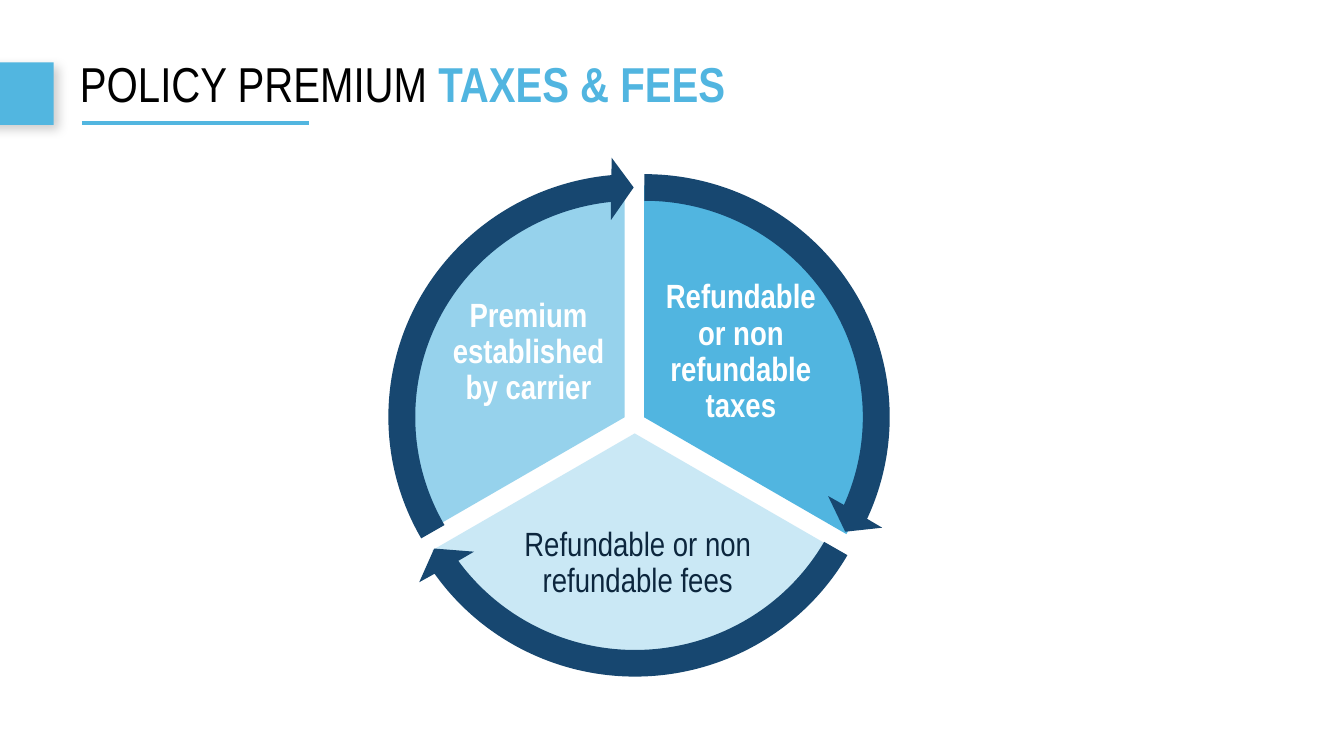
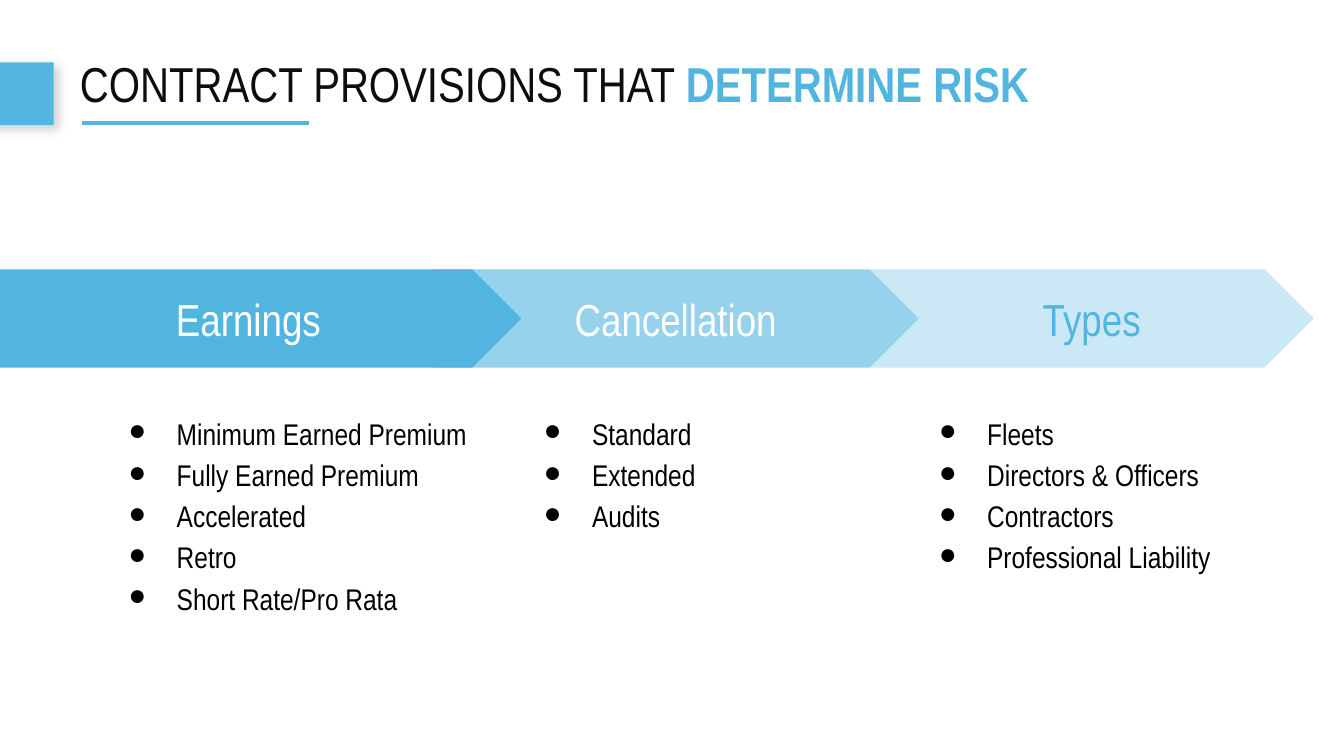
import math

from lxml import etree
from pptx import Presentation
from pptx import util as u
from pptx.dml.color import RGBColor
from pptx.enum import shapes, text
from pptx.oxml import ns

PX = 9144  # 100 px to the inch
FONT = "Arial Narrow"
SKY = RGBColor(0x51, 0xB5, 0xE0)
BAND = RGBColor(0x52, 0xB6, 0xE0)
NAVY = RGBColor(0x17, 0x47, 0x70)
INK = RGBColor(0x0C, 0x26, 0x3D)
BLACK = RGBColor(0, 0, 0)
SOFT_BLACK = RGBColor(0x0D, 0x0D, 0x0D)
WHITE = RGBColor(0xFF, 0xFF, 0xFF)


def px(*lengths):
    return [u.Emu(round(length * PX)) for length in lengths]


def child(parent, tag, **attributes):
    return etree.SubElement(parent, ns.qn(tag), attributes)


def paint(shape, color, opacity=100):
    shape.shadow.inherit = False
    shape.line.fill.background()
    shape.fill.solid()
    shape.fill.fore_color.rgb = color
    if opacity < 100:
        color_node = shape.fill._xPr.find(ns.qn("a:solidFill"))[0]
        child(color_node, "a:alpha", val=str(opacity * 1000))


def preset(slide, kind, box, color, opacity=100):
    shape = slide.shapes.add_shape(kind, *px(*box))
    paint(shape, color, opacity)
    return shape


def set_frame(shape, inset, anchor=text.MSO_ANCHOR.MIDDLE):
    frame = shape.text_frame
    frame.word_wrap = True
    frame.vertical_anchor = anchor
    frame.margin_left, frame.margin_top, frame.margin_right, frame.margin_bottom = px(*[inset] * 4)
    return frame


def add_run(paragraph, words, size, color, bold=False):
    run = paragraph.add_run()
    run.text = words
    run.font.name = FONT
    run.font.size = u.Pt(size)
    run.font.bold = bold
    run.font.color.rgb = color


def heading(slide, plain, strong, plain_color):
    # Underline
    rule = slide.shapes.add_connector(shapes.MSO_CONNECTOR.STRAIGHT, *px(122, 183, 460, 183))
    rule.line.color.rgb = BAND
    rule.line.width = u.Pt(5)
    child(rule._element.spPr, "a:effectLst")

    # Side tab with a soft shadow
    tab = preset(slide, shapes.MSO_SHAPE.RECTANGLE, (-51, 93, 131, 93), BAND)
    effects = tab._element.spPr.find(ns.qn("a:effectLst"))
    shadow = child(effects, "a:outerShdw", blurRad=str(u.Pt(12)), dist=str(u.Pt(7)),
                   dir=str(45 * 60000), algn="tl", rotWithShape="0")
    shade = child(shadow, "a:srgbClr", val="000000")
    child(shade, "a:alpha", val="20000")

    # Two-tone title
    title = set_frame(slide.shapes.add_textbox(*px(119, 59, 1780, 141)), 0).paragraphs[0]
    title.line_spacing = 0.9
    add_run(title, plain, 52.5, plain_color)
    add_run(title, strong, 52.5, SKY, bold=True)


def sector(group, box, start, opacity, label, label_box, color, bold):
    pie = preset(group, shapes.MSO_SHAPE.PIE, box, SKY, opacity)
    for index, angle in enumerate((start, (start + 120) % 360)):
        pie.adjustments[index] = angle * 0.6  # 60000ths of a degree over 100000
    caption = set_frame(group.shapes.add_textbox(*px(*label_box)), 3).paragraphs[0]
    caption.alignment = text.PP_ALIGN.CENTER
    caption.line_spacing = 0.9
    add_run(caption, label, 36, color, bold)


def arc_arrow(group, box, start):
    left, top, width, height = box

    def polar(radius, angle, pull=0):
        """Point at an angle, moved along the tangent by pull times the radius."""
        turn = math.radians(start + angle)
        x = math.cos(turn) - pull * math.sin(turn)
        y = math.sin(turn) + pull * math.cos(turn)
        return px(width / 2 + radius * x, height / 2 + 0.99 * radius * y)

    def arc(radius, begin, end):
        """Two Bézier pieces from begin to end."""
        step = (end - begin) / 2
        pull = 4 / 3 * math.tan(math.radians(step) / 4)
        return [("a:cubicBezTo", [polar(radius, angle, pull),
                                  polar(radius, angle + step, -pull),
                                  polar(radius, angle + step)])
                for angle in (begin, begin + step)]

    head = [polar(391, 115.2), polar(345, 120), polar(298, 113.5), polar(325, 114)]
    outline = [("a:moveTo", [polar(365, 0)]), *arc(365, 0, 114.8),
               *[("a:lnTo", [point]) for point in head],
               *arc(325, 114, 0), ("a:close", [])]

    # The frame gives the box, the outline is then drawn inside it
    builder = group.shapes.build_freeform(*px(left, top), scale=1.0)
    builder.add_line_segments([px(left + width, top), px(left + width, top + height),
                               px(left, top + height)])
    arrow = builder.convert_to_shape()
    track = next(arrow._element.iter(ns.qn("a:path")))
    for node in list(track):
        track.remove(node)
    for tag, points in outline:
        node = child(track, tag)
        for x, y in points:
            child(node, "a:pt", x=str(x), y=str(y))
    paint(arrow, NAVY)


def wheel(slide, box):
    left, top = box
    group = slide.shapes.add_group_shape()
    # Offset, start angle, opacity, label, label box, label colour, bold
    sectors = [
        ((29, 0), 270, 100, "Refundable or non refundable taxes", (397, 146, 249, 205), WHITE, True),
        ((15, 24), 30, 30, "Refundable or non refundable fees", (181, 472, 374, 181), INK, False),
        ((0, 0), 150, 60, "Premium established by carrier", (81, 146, 249, 205), WHITE, True),
    ]
    for (dx, dy), start, opacity, label, (x, y, w, h), color, bold in sectors:
        sector(group, (left + dx, top + dy, 697, 690), start, opacity,
               label, (left + x, top + y, w, h), color, bold)
    for dx, dy, start in ((-14, -43, 270), (-28, -18, 30), (-30, -43, 150)):
        arc_arrow(group, (left + dx, top + dy, 784, 775), start)


def stage(slide, kind, box, name, color, opacity):
    arrow = preset(slide, kind, box, SKY, opacity)
    arrow.adjustments[0] = 0.5
    caption = set_frame(arrow, 20).paragraphs[0]
    caption.alignment = text.PP_ALIGN.CENTER
    add_run(caption, name, 48, color)


def bullet_list(slide, box, items):
    frame = set_frame(slide.shapes.add_textbox(*px(*box)), 20, text.MSO_ANCHOR.TOP)
    for index, item in enumerate(items):
        line = frame.paragraphs[0] if index == 0 else frame.add_paragraph()
        line.line_spacing = 1.15
        properties = line._p.get_or_add_pPr()
        properties.set("marL", str(100 * PX))
        properties.set("indent", str(-72 * PX))
        child(child(properties, "a:buClr"), "a:srgbClr", val="000000")
        child(properties, "a:buFont", typeface=FONT)
        child(properties, "a:buChar", char="●")
        add_run(line, item, 32, BLACK)


def process(slide, top):
    chevron, pentagon = shapes.MSO_SHAPE.CHEVRON, shapes.MSO_SHAPE.PENTAGON
    # Kind, left, width, name, colour, opacity, list left, list width, list height, items
    stages = [
        (chevron, 1294, 661, "Types", SKY, 30, 1349, 489, 343,
         ["Fleets", "Directors & Officers", "Contractors", "Professional Liability"]),
        (pentagon, 0, 776, "Earnings", WHITE, 100, 143, 602, 205,
         ["Minimum Earned Premium", "Fully Earned Premium", "Accelerated", "Retro",
          "Short Rate/Pro Rata"]),
        (chevron, 644, 723, "Cancellation", WHITE, 60, 761, 489, 205,
         ["Standard", "Extended", "Audits"]),
    ]
    for kind, left, width, name, color, opacity, list_left, list_width, list_height, items in stages:
        stage(slide, kind, (left, top, width, 146), name, color, opacity)
        bullet_list(slide, (list_left, top + 189, list_width, list_height), items)


def main():
    deck = Presentation()
    deck.slide_width, deck.slide_height = px(2000, 1125)
    blank = deck.slide_layouts[6]

    taxes = deck.slides.add_slide(blank)
    heading(taxes, "POLICY PREMIUM ", "TAXES & FEES", BLACK)
    wheel(taxes, (581, 276))

    risk = deck.slides.add_slide(blank)
    heading(risk, "CONTRACT PROVISIONS THAT ", "DETERMINE RISK", SOFT_BLACK)
    process(risk, 401)

    deck.save("out.pptx")


if __name__ == "__main__":
    main()
